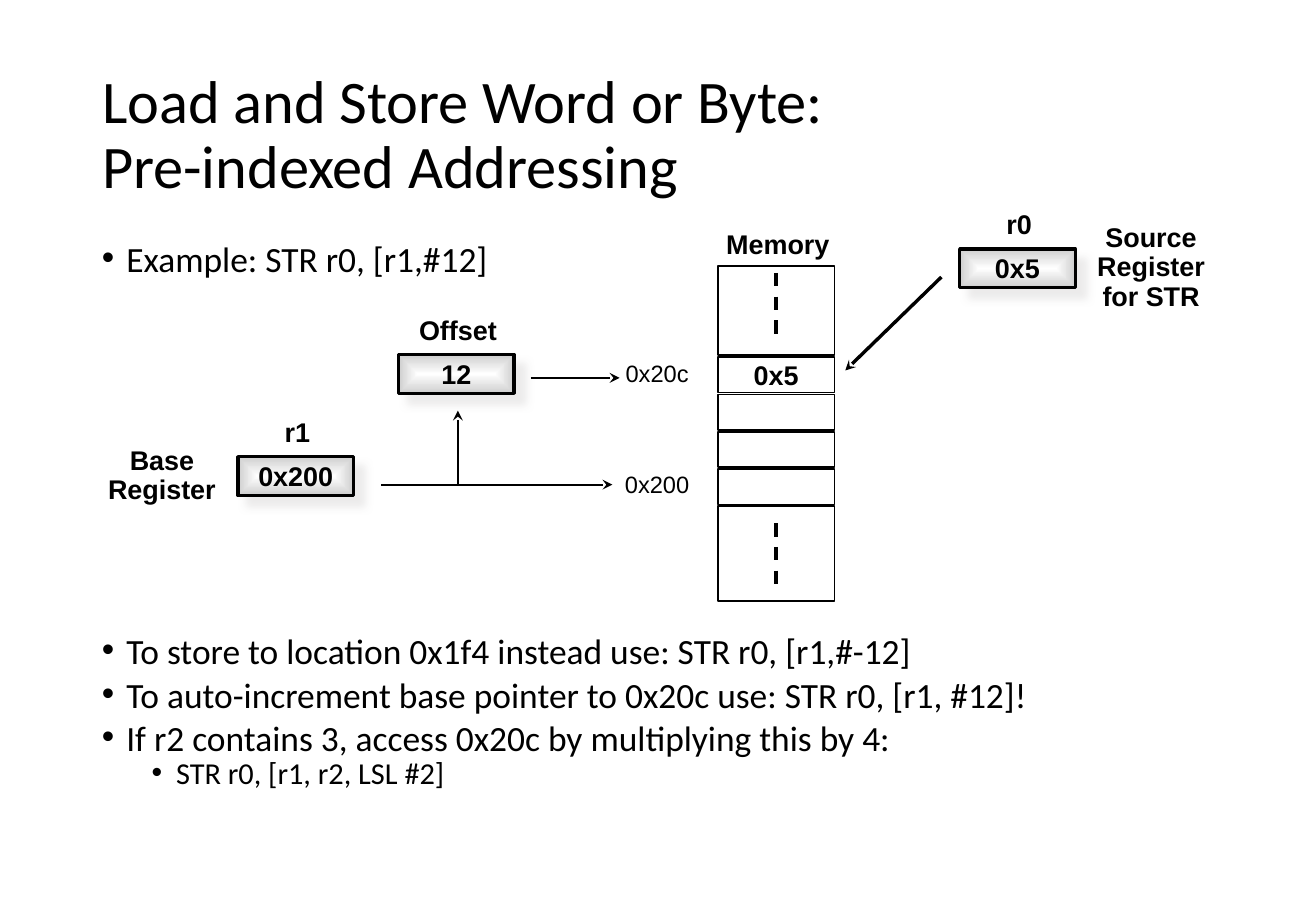
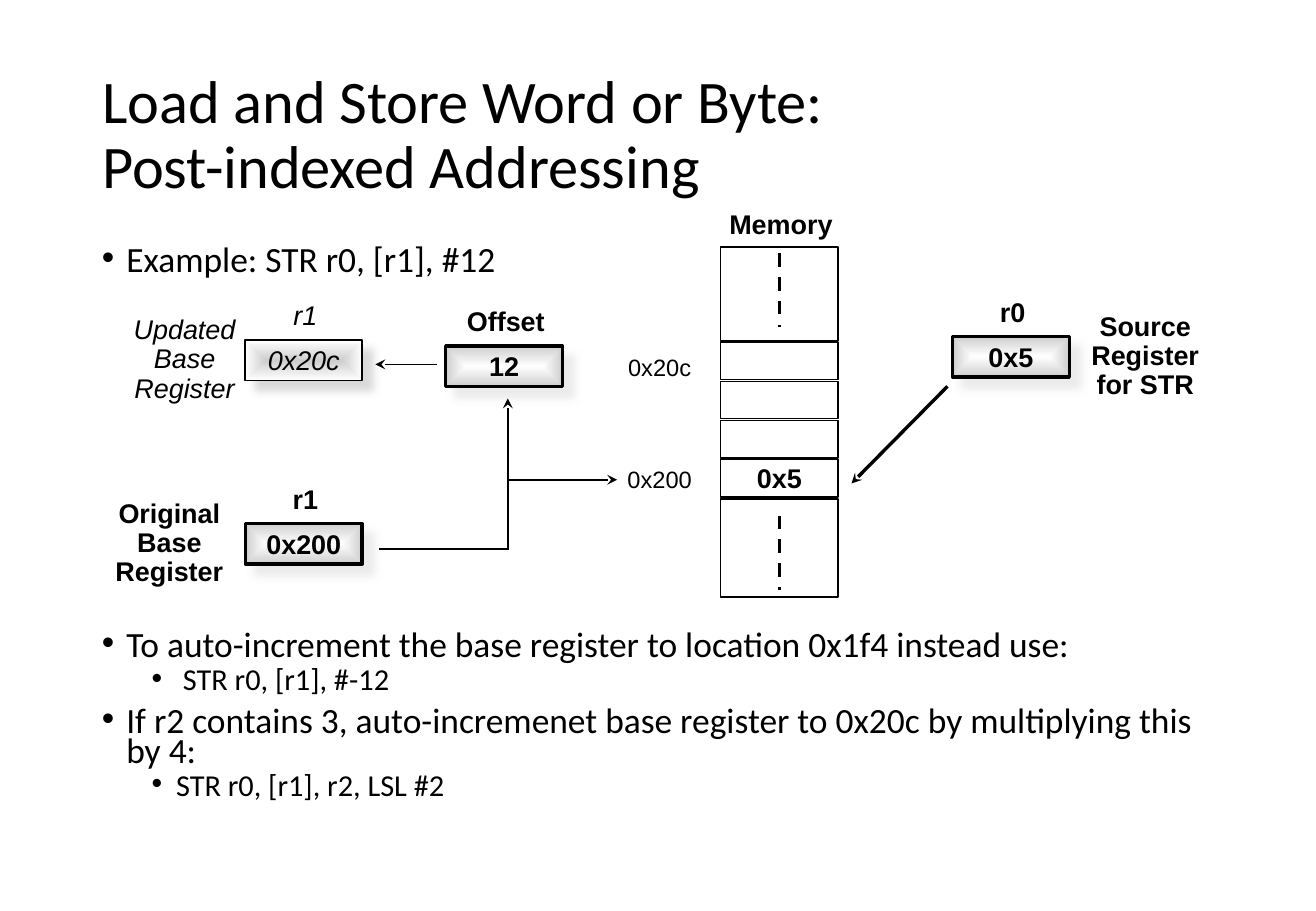
from copy import deepcopy

from pptx import Presentation
from pptx.dml.color import RGBColor
from pptx.enum.dml import MSO_LINE
from pptx.enum.shapes import MSO_CONNECTOR, MSO_SHAPE
from pptx.enum.text import MSO_ANCHOR, MSO_AUTO_SIZE, PP_ALIGN
from pptx.oxml import parse_xml
from pptx.oxml.ns import nsdecls, qn
from pptx.util import Pt

BLACK = RGBColor(0x00, 0x00, 0x00)
WHITE = RGBColor(0xFF, 0xFF, 0xFF)
GREY = RGBColor(0xCE, 0xCE, 0xCE)
PALE = RGBColor(0xE7, 0xE6, 0xE6)

SLIDE_SIZE = (780, 540)
CONTENT_LEFT, CONTENT_WIDTH = 53.3, 672.5
TITLE_TOP, TITLE_HEIGHT = 28.8, 104.4
EXAMPLE_TOP = 144
LABEL_WIDTH, LABEL_LINE = 84, 17.3
SIDE_GAP = 45
CELL_GAP = 1.1
MEMORY_ROWS = 4

# Registers: name, value, left, top, side label, side (-1 left, 1 right)
# Arrows: start x, start y, end x, end y, line width, arrowhead
SLIDES = [
    dict(
        title="Load and Store Word or Byte:\nPre-indexed Addressing",
        example="Example: STR r0, [r1,#12]",
        notes_top=376.4,
        notes=[
            (0, "To store to location 0x1f4 instead use: STR r0, [r1,#-12]"),
            (0, "To auto-increment base pointer to 0x20c use: STR r0, [r1, #12]!"),
            (0, "If r2 contains 3, access 0x20c by multiplying this by 4:"),
            (1, "STR r0, [r1, r2, LSL #2]"),
        ],
        register_size=(68.5, 23),
        registers=[
            dict(name="r1", value="0x200", left=141, top=270.7, side="Base\nRegister", direction=-1),
            dict(name="r0", value="0x5", left=568.8, top=147.6, side="Source\nRegister\nfor STR", direction=1),
            dict(name="Offset", value="12", left=236.2, top=210.2),
        ],
        memory=dict(left=425.5, top=157.7, width=69.1, first=52.9, row=21, last=56.2, dash=41.8, value_row=0),
        addresses=[("0x20c", 223.5), ("0x200", 289)],
        arrows=[
            (226, 287.3, 363, 287.3, 1, True),
            (271.4, 288, 271.4, 243.4, 1, True),
            (314.6, 224, 367.2, 224, 1, True),
            (558, 164.2, 501, 219.6, 2, True),
        ],
    ),
    dict(
        title="Load and Store Word or Byte:\nPost-indexed Addressing",
        example="Example: STR r0, [r1], #12",
        notes_top=372.2,
        notes=[
            (0, "To auto-increment the base register to location 0x1f4 instead use:"),
            (1, " STR r0, [r1], #-12"),
            (0, "If r2 contains 3, auto-incremenet base register to 0x20c by multiplying this by 4:"),
            (1, "STR r0, [r1], r2, LSL #2"),
        ],
        register_size=(69.3, 24),
        registers=[
            dict(name="r1", value="0x200", left=145.4, top=310.3, side="Original\nBase\nRegister", direction=-1),
            dict(name="r0", value="0x5", left=564.5, top=199.4, side="Source\nRegister\nfor STR", direction=1),
            dict(name="Offset", value="12", left=264.2, top=205.2),
            dict(name="r1", value="0x20c", left=145.4, top=201.6, side="Updated\nBase\nRegister", direction=-1,
                 side_gap=36, updated=True),
        ],
        memory=dict(left=427, top=146.2, width=69.8, first=55.6, row=22.1, last=58.3, dash=43.9, value_row=3),
        addresses=[("0x20c", 220), ("0x200", 286.2)],
        arrows=[
            (224.6, 325.4, 301.7, 325.4, 1, False),
            (301, 325.4, 301, 236.2, 1, True),
            (301, 284.4, 365.8, 284.4, 1, True),
            (259.2, 216, 222.5, 216, 1, True),
            (561.6, 229, 504.7, 286.6, 2, True),
        ],
    ),
]


def write(frame, text, *, font="Arial", size=16, bold=False, italic=False,
          align=PP_ALIGN.CENTER, spacing=0.9, before=0):
    """Add one paragraph to a text frame; newlines become line breaks."""
    paragraph = frame.add_paragraph() if frame.text else frame.paragraphs[0]
    paragraph.alignment = align
    paragraph.line_spacing = spacing
    paragraph.space_before = Pt(before)
    for index, line in enumerate(text.split("\n")):
        if index:
            paragraph.add_line_break()
        run = paragraph.add_run()
        run.text = line
        run.font.name, run.font.size = font, Pt(size)
        run.font.bold, run.font.italic = bold, italic
        run.font.color.rgb = BLACK
    for line_break in paragraph._p.findall(qn("a:br")):
        line_break.append(deepcopy(run._r.rPr))
    return paragraph


def add_text_box(slide, left, top, width, height):
    frame = slide.shapes.add_textbox(Pt(left), Pt(top), Pt(width), Pt(height)).text_frame
    frame.word_wrap = True
    return frame


def add_label(slide, text, center_x, center_y, **text_format):
    height = LABEL_LINE * len(text.split("\n")) + 7.2
    frame = add_text_box(slide, center_x - LABEL_WIDTH / 2, center_y - height / 2, LABEL_WIDTH, height)
    write(frame, text, **text_format)


def add_bullets(slide, items, top, height):
    frame = add_text_box(slide, CONTENT_LEFT, top, CONTENT_WIDTH, height)
    for level, text in items:
        paragraph = write(frame, text, font="Calibri", size=18 if level else 21, align=PP_ALIGN.LEFT,
                          spacing=0.7, before=4.1 if level else 8.1)
        paragraph.level = level
        properties = paragraph._p.get_or_add_pPr()
        properties.set("marL", str(Pt(44 if level else 14.5)))
        properties.set("indent", str(Pt(-14.5)))
        properties.append(parse_xml(f'<a:buFont {nsdecls("a")} typeface="Arial"/>'))
        properties.append(parse_xml(f'<a:buChar {nsdecls("a")} char="•"/>'))


def add_box(slide, left, top, width, height, line_width=1, text="", **text_format):
    shape = slide.shapes.add_shape(MSO_SHAPE.RECTANGLE, Pt(left), Pt(top), Pt(width), Pt(height))
    shape.shadow.inherit = False
    shape.fill.background()
    shape.line.color.rgb, shape.line.width = BLACK, Pt(line_width)
    if text:
        frame = shape.text_frame
        frame.margin_left = frame.margin_right = frame.margin_bottom = 0
        frame.margin_top = Pt(2)
        frame.vertical_anchor = MSO_ANCHOR.MIDDLE
        write(frame, text, **text_format)
    return shape


def shade(shape, center, edge, shadow):
    """Give a box a gradient from its centre and a soft shadow to the lower right."""
    shape.fill.gradient()
    for stop, color in zip(shape.fill.gradient_stops, (center, edge)):
        stop.color.rgb = color
    properties = shape._element.spPr
    gradient = properties.find(qn("a:gradFill"))
    gradient.replace(gradient.find(qn("a:lin")), parse_xml(
        f'<a:path {nsdecls("a")} path="shape">'
        '<a:fillToRect l="50000" t="50000" r="50000" b="50000"/></a:path>'))
    properties.find(qn("a:effectLst")).append(parse_xml(
        f'<a:outerShdw {nsdecls("a")} blurRad="{Pt(5)}" dist="{Pt(8.5)}" dir="2700000" algn="tl">'
        f'<a:srgbClr val="{shadow}"><a:alpha val="75000"/></a:srgbClr></a:outerShdw>'))


def add_line(slide, x1, y1, x2, y2, width, arrow=False):
    connector = slide.shapes.add_connector(MSO_CONNECTOR.STRAIGHT, Pt(x1), Pt(y1), Pt(x2), Pt(y2))
    connector.line.color.rgb, connector.line.width = BLACK, Pt(width)
    if arrow:
        connector.line._get_or_add_ln().append(parse_xml(f'<a:tailEnd {nsdecls("a")} type="stealth"/>'))
    connector._element.spPr.append(parse_xml(f'<a:effectLst {nsdecls("a")}/>'))
    return connector


def add_register(slide, size, name, value, left, top, side="", direction=0, side_gap=SIDE_GAP, updated=False):
    width, height = size
    style = dict(bold=not updated, italic=updated)
    box = add_box(slide, left, top, width, height, 1 if updated else 2, value, **style)
    shade(box, *((GREY, WHITE, GREY) if updated else (WHITE, GREY, PALE)))
    center_x, center_y = left + width / 2, top + height / 2
    add_label(slide, name, center_x + 1, top - 13.5, **style)
    if side:
        add_label(slide, side, center_x + direction * (width / 2 + side_gap), center_y, **style)


def add_memory(slide, left, top, width, first, row, last, dash, value_row):
    center_x = left + width / 2
    add_label(slide, "Memory", center_x + 1, top - 12, bold=True)
    heights = [first] + [row] * MEMORY_ROWS + [last]
    for index, height in enumerate(heights):
        text = "0x5" if index == value_row + 1 else ""
        add_box(slide, left, top, width, height, text=text, bold=True)
        if index in (0, len(heights) - 1):
            dash_top = top + (10 if index else 4)
            line = add_line(slide, center_x, dash_top, center_x, dash_top + dash, 2)
            line.line.dash_style = MSO_LINE.DASH
        top += height + CELL_GAP


def add_title(slide, text):
    title = slide.shapes.title
    title.left, title.top = Pt(CONTENT_LEFT), Pt(TITLE_TOP)
    title.width, title.height = Pt(CONTENT_WIDTH), Pt(TITLE_HEIGHT)
    title.text_frame.auto_size = MSO_AUTO_SIZE.NONE
    title.text_frame.vertical_anchor = MSO_ANCHOR.MIDDLE
    write(title.text_frame, text, font="Calibri", size=35.8, align=PP_ALIGN.LEFT)


def build_slide(presentation, content):
    slide = presentation.slides.add_slide(presentation.slide_layouts[5])
    add_title(slide, content["title"])
    add_bullets(slide, [(0, content["example"])], EXAMPLE_TOP, 26)
    add_bullets(slide, content["notes"], content["notes_top"], 110)
    add_memory(slide, **content["memory"])
    for register in content["registers"]:
        add_register(slide, content["register_size"], **register)
    for address, center_y in content["addresses"]:
        add_label(slide, address, content["memory"]["left"] - 36, center_y, size=14)
    for arrow in content["arrows"]:
        add_line(slide, *arrow)


def main():
    presentation = Presentation()
    presentation.slide_width, presentation.slide_height = map(Pt, SLIDE_SIZE)
    for content in SLIDES:
        build_slide(presentation, content)
    presentation.save("out.pptx")


if __name__ == "__main__":
    main()
